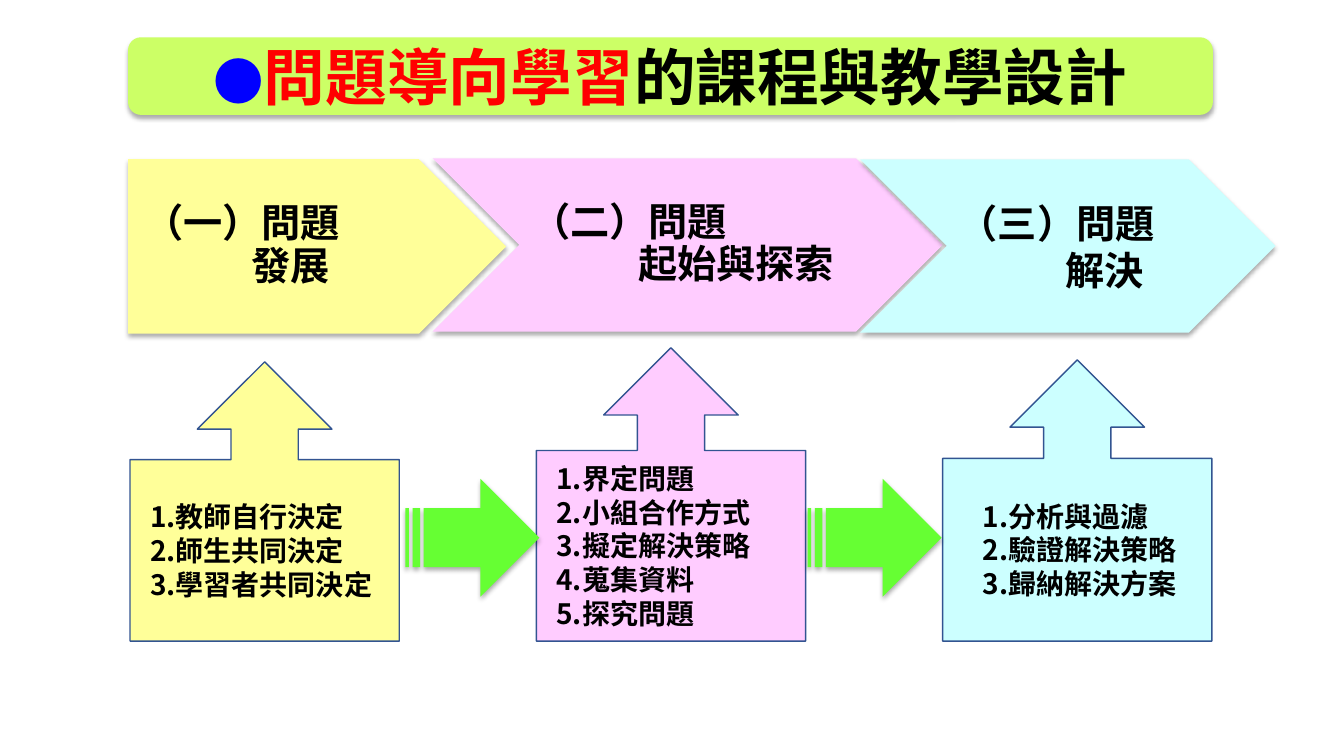
from lxml import etree
from pptx import Presentation
from pptx import util as u
from pptx.dml.color import RGBColor
from pptx.enum import shapes, text
from pptx.oxml import ns

FONT = "Noto Sans CJK SC"
KIND = shapes.MSO_SHAPE
YELLOW, PINK, CYAN = "FFFF99", "FFCCFF", "CCFFFF"
GREEN, LIME, NAVY, BLACK = "66FF33", "CCFF66", "325491", "000000"

TITLE = [("●", 36, "0000FF"), ("問題導向學習", 44, "FF0000"),
         ("的課程與教學設計", 44, BLACK)]
BAR = (1.27, 0.37, 10.76, 0.77)

STAGES = [
    (KIND.PENTAGON, (1.27, 1.58, 3.75, 1.73), YELLOW,
     ["（一）問題", "發展"], 0.16, 0.9),
    (KIND.CHEVRON, (4.29, 1.57, 5.06, 1.72), PINK,
     ["（二）問題", "起始與探索"], 0.12, 0.9),
    (KIND.CHEVRON, (8.53, 1.58, 4.12, 1.72), CYAN,
     ["（三）問題", "解決"], 0.12, u.Pt(34)),
]
STEPS = [
    (1.29, 3.59, YELLOW, 0.1,
     ["1.教師自行決定", "2.師生共同決定", "3.學習者共同決定"]),
    (5.32, 3.45, PINK, 0.1,
     ["1.界定問題", "2.小組合作方式", "3.擬定解決策略", "4.蒐集資料", "5.探究問題"]),
    (9.35, 3.57, CYAN, 0.3,
     ["1.分析與過濾", "2.驗證解決策略", "3.歸納解決方案"]),
]
BASE, WIDE = 6.36, 2.67
LINKS = [4.02, 8.01]
INDENT = 1.06


def color(code):
    return RGBColor.from_string(code)


def style(run, size, code):
    font = run.font
    font.size, font.bold, font.name = u.Pt(size), True, FONT
    font.color.rgb = color(code)
    east = etree.SubElement(font._element, ns.qn("a:ea"))
    east.set("typeface", FONT)


def draw(slide, kind, box, fill, line=None):
    shape = slide.shapes.add_shape(kind, *map(u.Inches, box))
    shape.fill.solid()
    shape.fill.fore_color.rgb = color(fill)
    shape.shadow.inherit = False
    if line:
        shape.line.color.rgb = color(line)
        shape.line.width = u.Pt(1)
    else:
        shape.line.fill.background()
        shade(shape)
    return shape


def shade(shape):
    effect = shape._element.spPr.find(ns.qn("a:effectLst"))
    outer = etree.SubElement(effect, ns.qn("a:outerShdw"), blurRad=str(u.Pt(3.5)),
                             dist=str(u.Pt(2.2)), dir="5400000", rotWithShape="0")
    tint = etree.SubElement(outer, ns.qn("a:srgbClr"), val=BLACK)
    etree.SubElement(tint, ns.qn("a:alpha"), val="32000")


def write(shape, lines, size, indents, gap=None):
    frame = shape.text_frame
    frame.word_wrap = True
    frame.vertical_anchor = text.MSO_ANCHOR.MIDDLE
    frame.text = "\n".join(lines)
    for para, indent in zip(frame.paragraphs, indents):
        para.alignment = text.PP_ALIGN.LEFT
        para.line_spacing = gap
        para._p.get_or_add_pPr().set("marL", str(u.Inches(indent)))
        style(para.runs[0], size, BLACK)


def head(slide):
    draw(slide, KIND.ROUNDED_RECTANGLE, BAR, LIME)
    title = slide.shapes.title
    title.left, title.top, title.width, title.height = map(u.Inches, BAR)
    slide.shapes._spTree.append(title._element)
    frame = title.text_frame
    frame.auto_size = text.MSO_AUTO_SIZE.NONE
    frame.vertical_anchor = text.MSO_ANCHOR.MIDDLE
    para = frame.paragraphs[0]
    para.alignment = text.PP_ALIGN.CENTER
    para.line_spacing = 1.0
    for words, size, code in TITLE:
        run = para.add_run()
        run.text = words
        style(run, size, code)


def main():
    deck = Presentation()
    deck.slide_width, deck.slide_height = u.Inches(13.33), u.Inches(7.5)
    slide = deck.slides.add_slide(deck.slide_layouts[5])

    for kind, box, fill, lines, inset, gap in STAGES:
        shape = draw(slide, kind, box, fill)
        write(shape, lines, 28, [0, INDENT], gap)
        frame = shape.text_frame
        frame.margin_left, frame.margin_right = u.Inches(inset), u.Inches(0.04)
        frame.margin_top = frame.margin_bottom = u.Inches(0.08)

    for left, top, fill, indent, lines in STEPS:
        box = (left, top, WIDE, BASE - top)
        shape = draw(slide, KIND.UP_ARROW_CALLOUT, box, fill, NAVY)
        write(shape, lines, 20, [indent] * len(lines))

    for left in LINKS:
        draw(slide, KIND.STRIPED_RIGHT_ARROW, (left, 4.75, 1.33, 1.17), GREEN)

    head(slide)
    deck.save("out.pptx")


if __name__ == "__main__":
    main()
